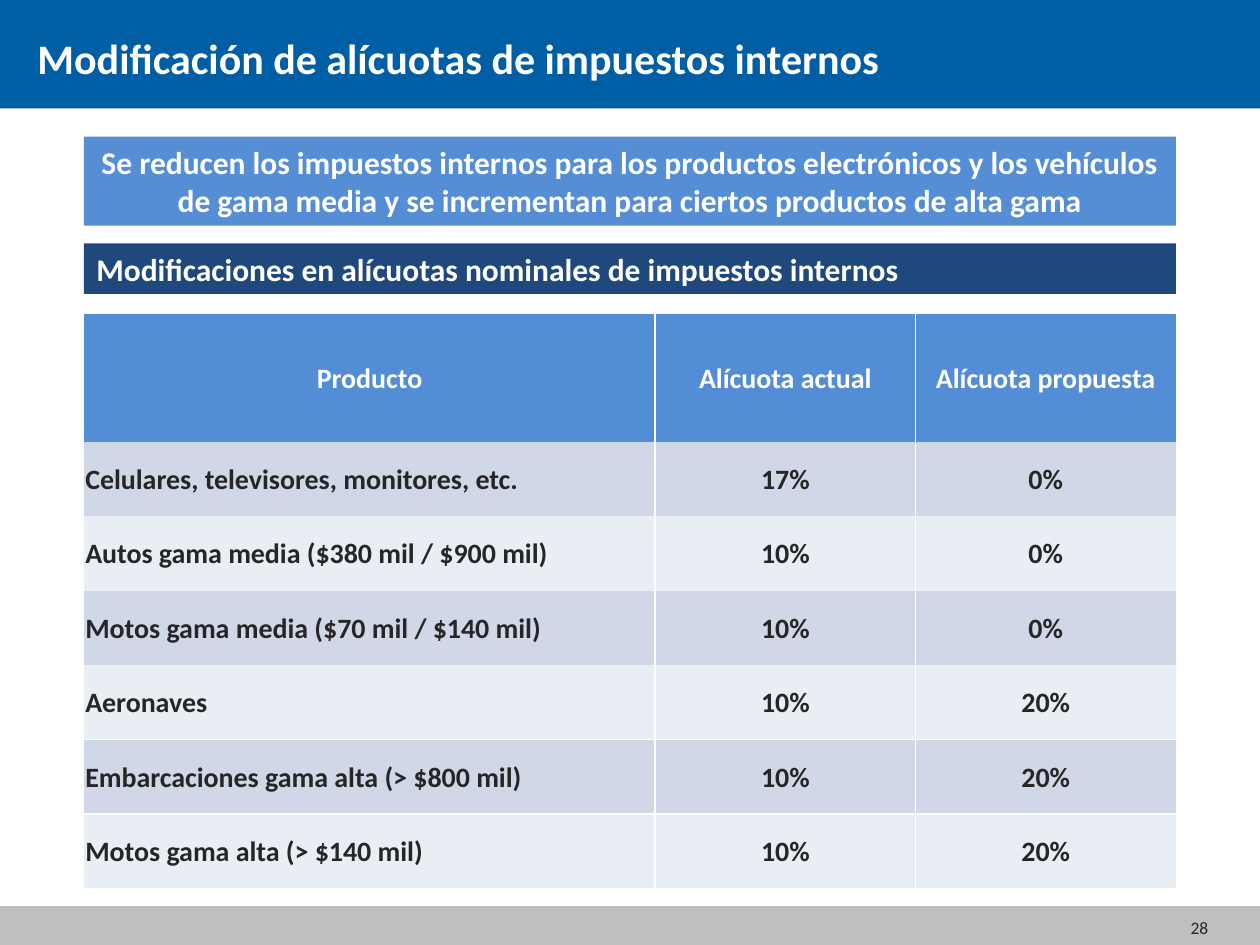
import pptx
import pptx.util
import pptx.dml.color
import pptx.enum.shapes
import pptx.enum.text
import pptx.oxml

Pt = pptx.util.Pt
Align = pptx.enum.text.PP_ALIGN
Anchor = pptx.enum.text.MSO_ANCHOR
WHITE = "FFFFFF"
DARK = "262626"
LEFT, WIDTH = 48, 624
PLAIN = "{2D5ABB26-0587-4C30-8999-92F81FD0307C}"


def color(text):
    return pptx.dml.color.RGBColor.from_string(text)


class Deck:
    font = "Calibri"

    def __init__(self):
        self.file = pptx.Presentation()
        self.file.slide_width, self.file.slide_height = Pt(720), Pt(540)
        self.slide = self.file.slides.add_slide(self.file.slide_layouts[5])
        self.shapes = self.slide.shapes

    def add_run(self, frame, text, size, ink, bold=True, align=Align.LEFT):
        par = frame.paragraphs[0]
        par.alignment = align
        run = par.add_run()
        run.text = text
        run.font.name, run.font.size, run.font.bold = self.font, Pt(size), bold
        run.font.color.rgb = color(ink)

    def frame(self, shape, anchor=Anchor.MIDDLE):
        frame = shape.text_frame
        frame.word_wrap = True
        frame.vertical_anchor = anchor
        return frame

    def bar(self, x, y, w, h, fill, text=None, align=Align.LEFT, line=None):
        kind = pptx.enum.shapes.MSO_SHAPE.RECTANGLE
        bar = self.shapes.add_shape(kind, Pt(x), Pt(y), Pt(w), Pt(h))
        bar.shadow.inherit = False
        bar.fill.solid()
        bar.fill.fore_color.rgb = color(fill)
        if line:
            bar.line.color.rgb = color(line)
            bar.line.width = Pt(2)
        else:
            bar.line.fill.background()
        if text:
            self.add_run(self.frame(bar), text, 18, WHITE, align=align)

    def title(self, x, y, w, h, text):
        title = self.shapes.title
        title.left, title.top, title.width, title.height = Pt(x), Pt(y), Pt(w), Pt(h)
        self.shapes._spTree.append(title._element)
        self.add_run(self.frame(title, Anchor.TOP), text, 24, WHITE)

    def label(self, x, y, w, h, text):
        box = self.shapes.add_textbox(Pt(x), Pt(y), Pt(w), Pt(h))
        self.add_run(self.frame(box), text, 10, DARK, False, Align.RIGHT)

    def edge(self, cell, sides):
        props = cell._tc.get_or_add_tcPr()
        for spot, side in enumerate(sides):
            props.insert(spot, pptx.oxml.parse_xml(
                f'<a:ln{side} xmlns:a="http://schemas.openxmlformats.org/drawingml/2006/main" w="12700">'
                f'<a:solidFill><a:srgbClr val="{WHITE}"/></a:solidFill></a:ln{side}>'))

    def cell(self, cell, text, fill, ink, align):
        cell.margin_left = cell.margin_right = cell.margin_top = Pt(0.75)
        cell.margin_bottom = 0
        cell.vertical_anchor = Anchor.MIDDLE
        cell.fill.solid()
        cell.fill.fore_color.rgb = color(fill)
        self.add_run(cell.text_frame, text, 16, ink, align=align)

    def table(self, x, y, cols, rows, data, ruled):
        table = self.shapes.add_table(len(rows), len(cols), Pt(x), Pt(y),
                                      Pt(sum(cols)), Pt(sum(rows))).table
        table.first_row = table.horz_banding = False
        table._tbl.tblPr[0].text = PLAIN
        for col, width in zip(table.columns, cols):
            col.width = Pt(width)
        for row, height in zip(table.rows, rows):
            row.height = Pt(height)
        for r, line in enumerate(data):
            fill = ("E9EDF4", "D0D8E8")[r % 2] if r else "538DD5"
            for c, text in enumerate(line):
                cell = table.cell(r, c)
                align = Align.LEFT if r and c == 0 else Align.CENTER
                self.cell(cell, text, fill, DARK if r else WHITE, align)
                rules = {"L": c > 0, "R": c < len(cols) - 1,
                         "T": r > ruled, "B": r >= ruled}
                self.edge(cell, [side for side, on in rules.items() if on])


def main():
    deck = Deck()
    deck.bar(0, 0, 720, 62, "005EA4")
    deck.bar(0, 519, 720, 21, "BFBFBF", line="BFBFBF")
    deck.label(530, 515.5, 167.5, 29, "28")
    deck.title(14.2, 15.2, 652, 36, "Modificación de alícuotas de impuestos internos")
    data = [
        ("Producto", "Alícuota actual", "Alícuota propuesta"),
        ("Celulares, televisores, monitores, etc.", "17%", "0%"),
        ("Autos gama media ($380 mil / $900 mil)", "10%", "0%"),
        ("Motos gama media ($70 mil / $140 mil)", "10%", "0%"),
        ("Aeronaves", "10%", "20%"),
        ("Embarcaciones gama alta (> $800 mil)", "10%", "20%"),
        ("Motos gama alta (> $140 mil)", "10%", "20%"),
    ]
    deck.table(LEFT, 179.5, [326.4, 148.8, 148.8], [73] + [42.55] * 6, data, 4)
    deck.bar(LEFT, 139, WIDTH, 29, "1F497D",
             "Modificaciones en alícuotas nominales de impuestos internos")
    deck.bar(LEFT, 78, WIDTH, 51, "558ED5",
             "Se reducen los impuestos internos para los productos electrónicos y los vehículos "
             "de gama media y se incrementan para ciertos productos de alta gama", Align.CENTER)
    deck.file.save("out.pptx")


if __name__ == "__main__":
    main()
